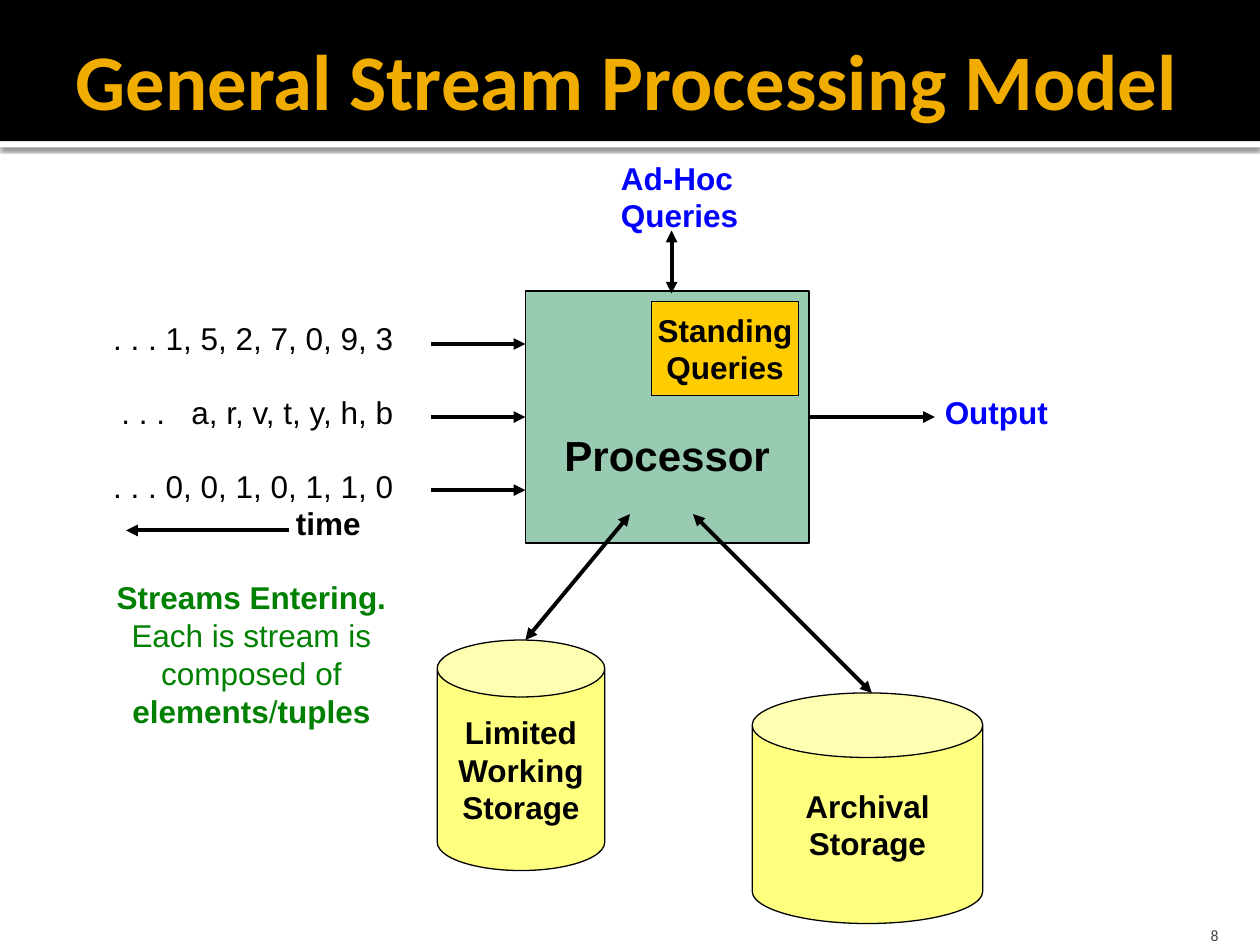
from lxml import etree
from pptx import Presentation
from pptx.dml.color import RGBColor
from pptx.enum.shapes import MSO_CONNECTOR, MSO_SHAPE
from pptx.enum.text import MSO_ANCHOR, MSO_AUTO_SIZE, PP_ALIGN
from pptx.oxml.ns import qn
from pptx.util import Inches, Pt

BLACK = RGBColor(0x00, 0x00, 0x00)
WHITE = RGBColor(0xFF, 0xFF, 0xFF)
AMBER = RGBColor(0xF0, 0xAD, 0x00)
GRAY = RGBColor(0x45, 0x45, 0x45)
TEAL = RGBColor(0x33, 0x99, 0x66)
YELLOW = RGBColor(0xFF, 0xFF, 0x00)
GOLD = RGBColor(0xFF, 0xCC, 0x00)
BLUE = RGBColor(0x00, 0x00, 0xFF)
GREEN = RGBColor(0x00, 0x80, 0x00)
LINE_PITCH = Pt(20.7)


def write(sp, lines, size=18, color=BLACK, bold=True, align=PP_ALIGN.LEFT, name="Arial"):
    tf = sp.text_frame
    tf.text = "\n".join(lines)
    for p in tf.paragraphs:
        p.alignment = align
        p.font.name = name
        p.font.size = Pt(size)
        p.font.bold = bold
        p.font.color.rgb = color
    return tf


def add_arrow(x1, y1, x2, y2, double=False):
    line = slide.shapes.add_connector(
        MSO_CONNECTOR.STRAIGHT, Inches(x1), Inches(y1), Inches(x2), Inches(y2))
    line.line.color.rgb = BLACK
    line.line.width = Pt(2.25)
    ln = line.line._get_or_add_ln()
    for end in ("headEnd", "tailEnd") if double else ("tailEnd",):
        etree.SubElement(ln, qn(f"a:{end}"), type="triangle")
    etree.SubElement(line._element.spPr, qn("a:effectLst"))
    return line


prs = Presentation()
prs.slide_width, prs.slide_height = Inches(10), Inches(7.5)
slide = prs.slides.add_slide(prs.slide_layouts[5])

bars = []
for top, height, color in ((1.12, 0.05, WHITE), (0, 1.12, BLACK)):
    bar = slide.shapes.add_shape(
        MSO_SHAPE.RECTANGLE, 0, Inches(top), prs.slide_width, Inches(height))
    bar.shadow.inherit = False
    bar.fill.solid()
    bar.fill.fore_color.rgb = color
    bar.line.fill.background()
    bars.append(bar)
for bar in reversed(bars):
    slide.shapes._spTree.insert(2, bar._element)
effects = bars[0]._element.spPr.find(qn("a:effectLst"))
shadow = etree.SubElement(effects, qn("a:outerShdw"), blurRad=str(Pt(2.5)),
                          dist=str(Pt(0.8)), dir="5400000", rotWithShape="0")
shadow_color = etree.SubElement(shadow, qn("a:srgbClr"), val="000000")
etree.SubElement(shadow_color, qn("a:alpha"), val="60000")

title = slide.shapes.title
title.left, title.top, title.width, title.height = (
    Inches(0.5), Inches(0.17), Inches(9.5), Inches(0.92))
tf = write(title, ["General Stream Processing Model"], 45, AMBER, name="Calibri")
tf.vertical_anchor = MSO_ANCHOR.MIDDLE
tf.auto_size = MSO_AUTO_SIZE.NONE
tf.margin_right = Inches(0.05)

number = slide.shapes.add_textbox(Inches(8.97), Inches(7.2), Inches(0.8), Inches(0.3))
tf = write(number, ["8"], 9, GRAY, False, PP_ALIGN.RIGHT, "Calibri")
tf.vertical_anchor = MSO_ANCHOR.BOTTOM
tf.margin_bottom = 0

nodes = {}
for lines, kind, x, y, w, h, color, alpha, size, adj in (
    (["Processor"], MSO_SHAPE.RECTANGLE, 4.17, 2.31, 2.25, 2, TEAL, 50, 24, None),
    (["Limited", "Working", "Storage"], MSO_SHAPE.CAN, 3.47, 5.08, 1.33, 1.83, YELLOW, 50, 18, 0.34),
    (["Archival", "Storage"], MSO_SHAPE.CAN, 5.97, 5.5, 1.83, 1.83, YELLOW, 50, 18, 0.28),
    (["Standing", "Queries"], MSO_SHAPE.RECTANGLE, 5.17, 2.39, 1.17, 0.75, GOLD, 100, 18, None),
):
    sp = slide.shapes.add_shape(kind, Inches(x), Inches(y), Inches(w), Inches(h))
    sp.shadow.inherit = False
    sp.fill.solid()
    sp.fill.fore_color.rgb = color
    if alpha < 100:
        fill_color = sp._element.spPr.find(qn("a:solidFill"))[0]
        etree.SubElement(fill_color, qn("a:alpha"), val=str(alpha * 1000))
    sp.line.color.rgb = BLACK
    sp.line.width = Pt(0.75)
    if adj:
        sp.adjustments[0] = adj
    tf = write(sp, lines, size, align=PP_ALIGN.CENTER)
    tf.word_wrap = False
    tf.vertical_anchor = MSO_ANCHOR.MIDDLE
    nodes[lines[0]] = sp
processor = nodes["Processor"]
processor.text_frame.margin_top = Inches(0.65)

for lines, x, y, w, h in (
    (["Ad-Hoc", "Queries"], 4.83, 1.21, 1.14, 0.71),
    (["Output"], 7.4, 3.07, 1.03, 0.4),
):
    label = slide.shapes.add_textbox(Inches(x), Inches(y), Inches(w), Inches(h))
    write(label, lines, color=BLUE).word_wrap = False

streams = slide.shapes.add_textbox(Inches(0.77), Inches(2.48), Inches(2.45), Inches(3.43))
tf = write(streams, [
    ". . . 1, 5, 2, 7, 0, 9, 3",
    ". . .   a, r, v, t, y, h, b",
    ". . . 0, 0, 1, 0, 1, 1, 0",
    "time",
    "Streams Entering.",
    "Each is stream is",
], bold=False, align=PP_ALIGN.RIGHT)
tf.word_wrap = True
*rows, time, heading, detail = tf.paragraphs
for p in (*rows[1:], heading):
    p.space_before = LINE_PITCH
time.alignment = PP_ALIGN.LEFT
time._p.get_or_add_pPr().set("marL", str(Inches(1.48)))
time.font.bold = heading.font.bold = True
for p in (heading, detail):
    p.alignment = PP_ALIGN.CENTER
    p.font.color.rgb = GREEN
detail.add_line_break()
detail.add_run().text = "composed of"
detail.add_line_break()
for text, bold in (("elements", True), ("/", False), ("tuples", True)):
    r = detail.add_run()
    r.text = text
    r.font.bold = bold

for y in (2.73, 3.31, 3.89):
    arrow = add_arrow(3.42, y, 4.17, y)
    if y == 3.31:
        arrow.end_connect(processor, 1)
add_arrow(6.42, 3.31, 7.42, 3.31).begin_connect(processor, 3)
add_arrow(2.29, 4.21, 1, 4.21)
add_arrow(5.33, 1.83, 5.33, 2.33, double=True)
add_arrow(5, 4.08, 4.17, 5.08, double=True)
add_arrow(5.5, 4.08, 6.92, 5.5, double=True)

prs.save("out.pptx")
